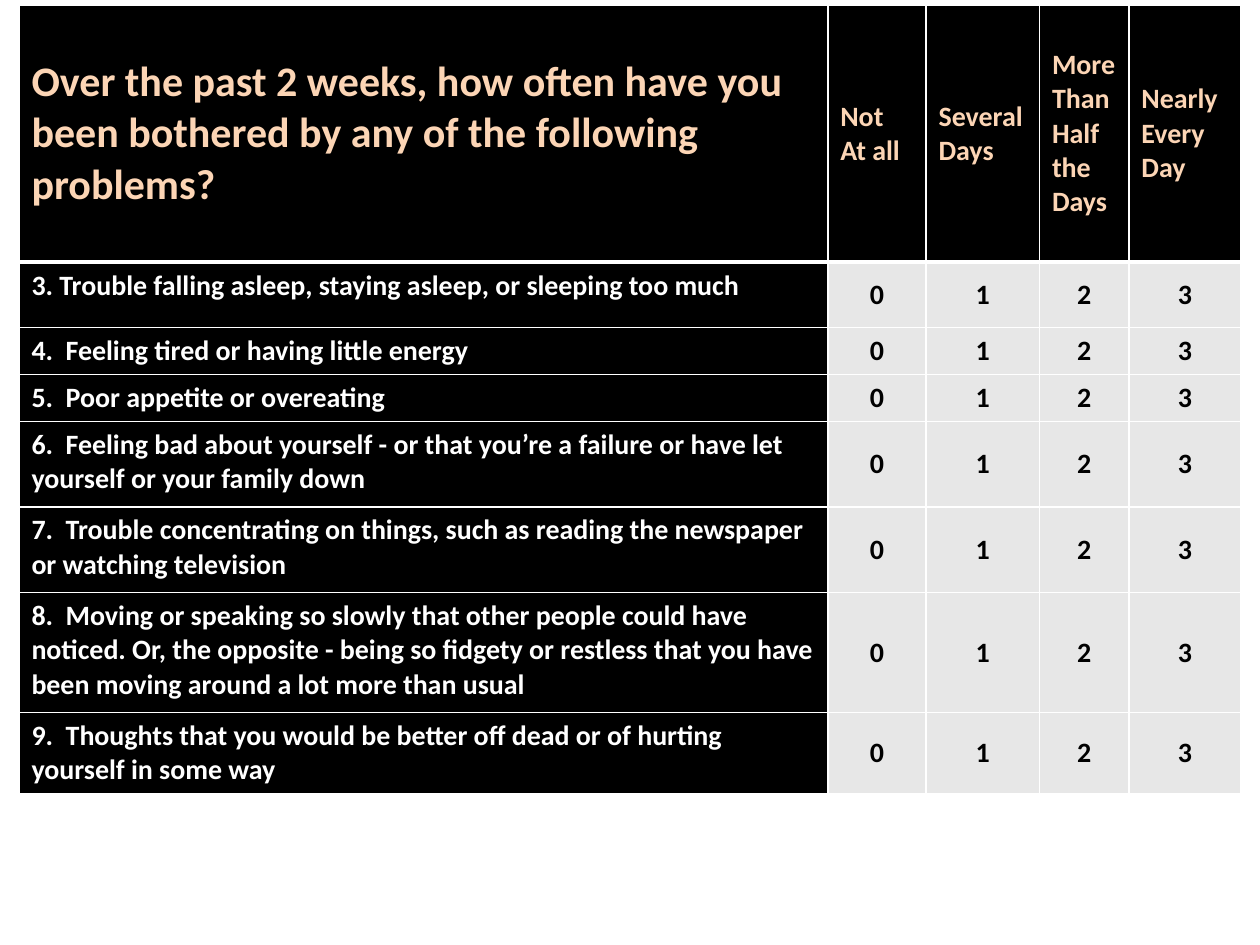
from dataclasses import dataclass

from lxml import etree
from pptx import Presentation
from pptx import util as u
from pptx.dml.color import RGBColor
from pptx.enum import text
from pptx.oxml import ns


@dataclass(frozen=True)
class Theme:
    font: str = "Calibri"
    head: int = 24
    body: int = 16
    black: str = "000000"
    white: str = "FFFFFF"
    peach: str = "FCD5B5"
    gray: str = "E7E7E7"
    thin: int = 1
    thick: int = 3


THEME = Theme()

HEADS = [
    "Over the past 2 weeks, how often have you been bothered by any of "
    "the following problems?",
    "Not At all",
    "Several Days",
    "More Than Half the Days",
    "Nearly Every Day",
]
ITEMS = [
    "3. Trouble falling asleep, staying asleep, or sleeping too much",
    "4.  Feeling tired or having little energy",
    "5.  Poor appetite or overeating",
    "6.  Feeling bad about yourself - or that you’re a failure or have let "
    "yourself or your family down",
    "7.  Trouble concentrating on things, such as reading the newspaper "
    "or watching television",
    "8.  Moving or speaking so slowly that other people could have noticed. "
    "Or, the opposite - being so fidgety or restless that you have been "
    "moving around a lot more than usual",
    "9.  Thoughts that you would be better off dead or of hurting yourself "
    "in some way",
]
SCORES = ["0", "1", "2", "3"]
COLS = [6.42, 0.78, 0.9, 0.71, 0.89]
ROWS = [2.04, 0.52, 0.37, 0.37, 0.68, 0.68, 0.95, 0.63]


def add_edges(cell, top, bottom):
    """Draw white lines on all four sides of a cell."""
    props = cell._tc.get_or_add_tcPr()
    sides = {"lnL": THEME.thin, "lnR": THEME.thin, "lnT": top, "lnB": bottom}
    for tag, width in sides.items():
        line = etree.SubElement(props, ns.qn(f"a:{tag}"), w=str(u.Pt(width)))
        fill = etree.SubElement(line, ns.qn("a:solidFill"))
        etree.SubElement(fill, ns.qn("a:srgbClr"), val=THEME.white)


def fill_cell(cell, words, color, back, size=THEME.body, middle=True,
              center=False):
    """Write one cell with its text style and background."""
    cell.text = words
    cell.fill.solid()
    cell.fill.fore_color.rgb = RGBColor.from_string(back)
    anchor = text.MSO_ANCHOR
    cell.vertical_anchor = anchor.MIDDLE if middle else anchor.TOP
    para = cell.text_frame.paragraphs[0]
    para.alignment = text.PP_ALIGN.CENTER if center else text.PP_ALIGN.LEFT
    font = para.font
    font.name, font.size, font.bold = THEME.font, u.Pt(size), True
    font.color.rgb = RGBColor.from_string(color)


def add_grid(slide):
    """Place the empty table with its column widths and row heights."""
    frame = slide.shapes.add_table(
        len(ROWS), len(COLS), u.Inches(0.15), u.Inches(0.04),
        u.Inches(sum(COLS)), u.Inches(sum(ROWS)))
    grid = frame.table
    grid.horz_banding = False
    for col, width in zip(grid.columns, COLS):
        col.width = u.Inches(width)
    for row, height in zip(grid.rows, ROWS):
        row.height = u.Inches(height)
    for num, row in enumerate(grid.rows):
        for cell in row.cells:
            add_edges(cell,
                      top=THEME.thick if num == 1 else THEME.thin,
                      bottom=THEME.thick if num == 0 else THEME.thin)
    return grid


def add_heads(grid):
    for num, words in enumerate(HEADS):
        size = THEME.body if num else THEME.head
        fill_cell(grid.cell(0, num), words, THEME.peach, THEME.black, size)


def add_items(grid):
    for row, words in enumerate(ITEMS, 1):
        fill_cell(grid.cell(row, 0), words, THEME.white, THEME.black,
                  middle=False)
        for col, score in enumerate(SCORES, 1):
            fill_cell(grid.cell(row, col), score, THEME.black, THEME.gray,
                      center=True)


def main():
    deck = Presentation()
    deck.slide_width, deck.slide_height = u.Inches(10), u.Inches(7.5)
    # Blank layout: the table is the whole slide
    slide = deck.slides.add_slide(deck.slide_layouts[6])

    # Questionnaire table
    grid = add_grid(slide)
    add_heads(grid)
    add_items(grid)

    deck.save("out.pptx")


if __name__ == "__main__":
    main()
